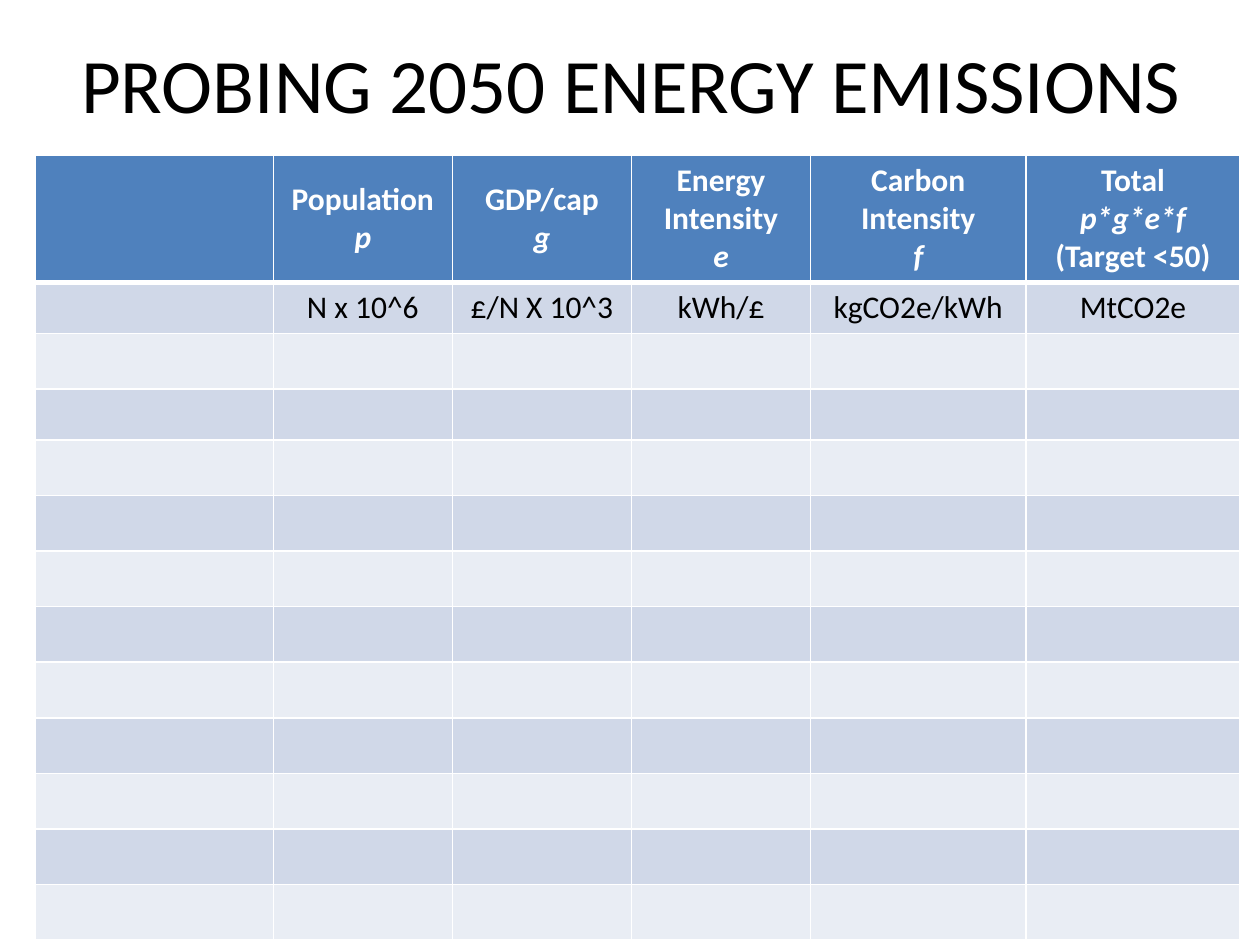
import dataclasses

import lxml.etree
import pptx
import pptx.dml.color
import pptx.enum.text
import pptx.oxml.ns
import pptx.util
from pptx.util import Cm


@dataclasses.dataclass(frozen=True)
class Theme:
    font: str = "Calibri"
    title_size: int = 44
    table_size: int = 18
    dark: str = "000000"
    light: str = "FFFFFF"
    header: str = "4F81BD"
    bands: tuple = ("D0D8E8", "E9EDF4")


THEME = Theme()

COLUMNS = (4.8, 3.61, 3.61, 3.61, 4.34, 4.32)
ROWS = (2.57, 1.03, 1.12, 1.03) + (1.12,) * 9
HEADINGS = (
    (),
    ("Population", "p"),
    ("GDP/cap", "g"),
    ("Energy Intensity", "e"),
    ("Carbon Intensity", "f"),
    ("Total", "p*g*e*f", "(Target <50)"),
)
UNITS = ("", "N x 10^6", "£/N X 10^3", "kWh/£", "kgCO2e/kWh", "MtCO2e")


def rgb(value):
    return pptx.dml.color.RGBColor.from_string(value)


def write(p, text, size=THEME.table_size, color=THEME.dark, bold=False, italic=False):
    p.alignment = pptx.enum.text.PP_ALIGN.CENTER
    r = p.add_run()
    r.text = text
    r.font.name = THEME.font
    r.font.size = pptx.util.Pt(size)
    r.font.color.rgb = rgb(color)
    r.font.bold = bold
    r.font.italic = italic


def add_title(s, text):
    sp = s.shapes.add_textbox(Cm(1.3), Cm(0.08), Cm(22.86), Cm(3.18))
    tf = sp.text_frame
    tf.word_wrap = True
    tf.vertical_anchor = pptx.enum.text.MSO_ANCHOR.MIDDLE
    write(tf.paragraphs[0], text, size=THEME.title_size)


def set_borders(cell, bottom=1, top=1):
    tc_pr = cell._tc.get_or_add_tcPr()
    qn = pptx.oxml.ns.qn
    widths = {"a:lnL": 1, "a:lnR": 1, "a:lnT": top, "a:lnB": bottom}
    for i, (tag, width) in enumerate(widths.items()):
        ln = lxml.etree.Element(qn(tag), w=str(pptx.util.Pt(width)))
        fill = lxml.etree.SubElement(ln, qn("a:solidFill"))
        lxml.etree.SubElement(fill, qn("a:srgbClr"), val=THEME.light)
        tc_pr.insert(i, ln)


def style_cell(cell, row):
    cell.fill.solid()
    cell.fill.fore_color.rgb = rgb(THEME.bands[(row - 1) % 2] if row else THEME.header)
    set_borders(cell, bottom=1 if row else 3, top=3 if row == 1 else 1)


def fill_heading(cell, lines):
    cell.vertical_anchor = pptx.enum.text.MSO_ANCHOR.MIDDLE
    tf = cell.text_frame
    for i, line in enumerate(lines):
        p = tf.add_paragraph() if i else tf.paragraphs[0]
        write(p, line, color=THEME.light, bold=True, italic=i == 1)


def add_emissions_table(s):
    frame = s.shapes.add_table(
        len(ROWS), len(COLUMNS), Cm(0.71), Cm(3.12), Cm(sum(COLUMNS)), Cm(sum(ROWS))
    )
    table = frame.table
    for column, width in zip(table.columns, COLUMNS):
        column.width = Cm(width)
    for i, (row, height) in enumerate(zip(table.rows, ROWS)):
        row.height = Cm(height)
        for cell in row.cells:
            style_cell(cell, i)
    for j, (heading, unit) in enumerate(zip(HEADINGS, UNITS)):
        fill_heading(table.cell(0, j), heading)
        if unit:
            write(table.cell(1, j).text_frame.paragraphs[0], unit)


def main():
    prs = pptx.Presentation()
    prs.slide_width, prs.slide_height = Cm(25.4), Cm(19.05)
    s = prs.slides.add_slide(prs.slide_layouts[6])
    add_title(s, "PROBING 2050 ENERGY EMISSIONS")
    add_emissions_table(s)
    prs.save("out.pptx")


if __name__ == "__main__":
    main()
